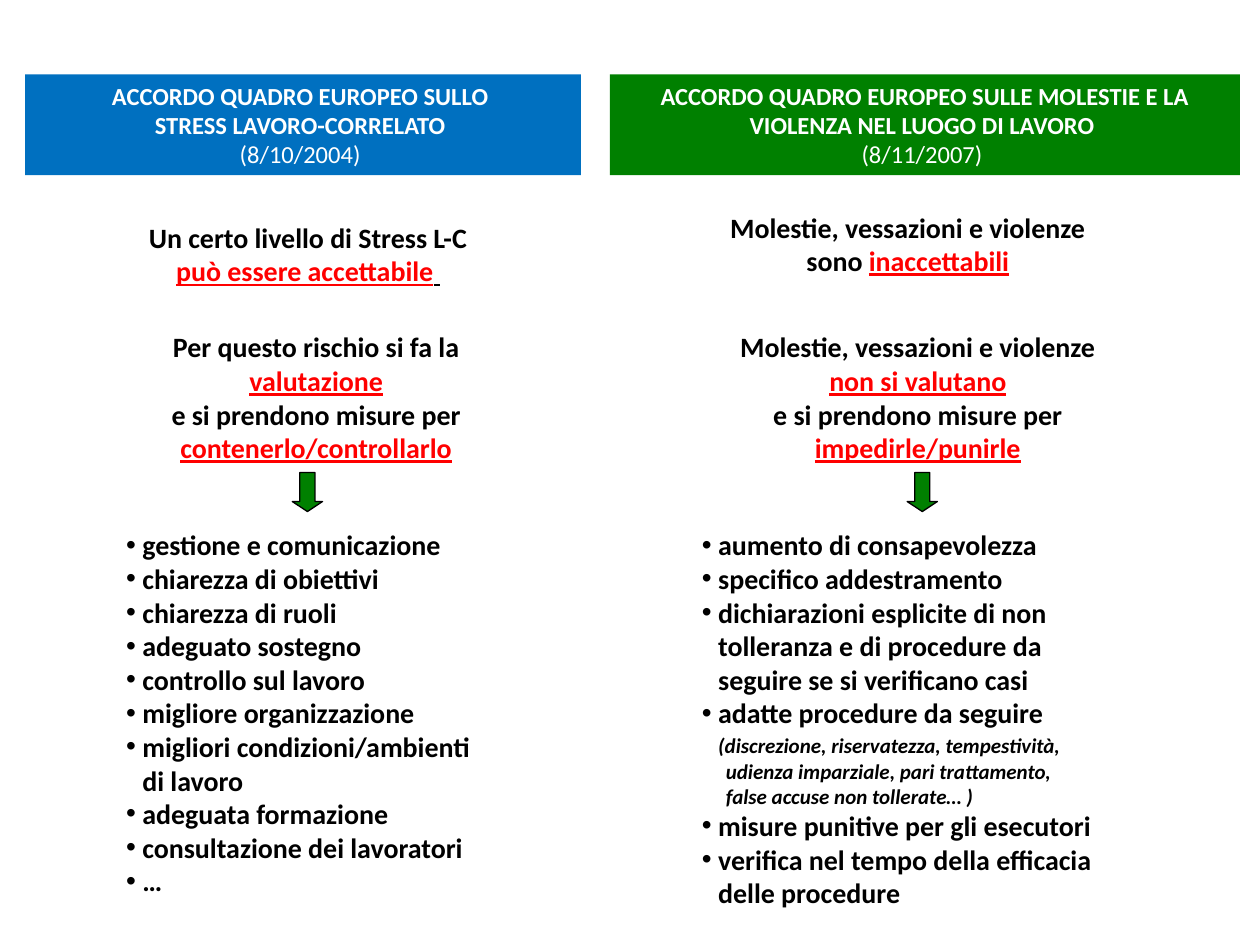
from pptx import Presentation
from pptx.dml.color import RGBColor as Rgb
from pptx.enum.shapes import MSO_SHAPE as Kind
from pptx.enum.text import MSO_ANCHOR as Anchor, MSO_AUTO_SIZE as Auto, PP_ALIGN as Align
from pptx.oxml.xmlchemy import OxmlElement as Node
from pptx.util import Inches, Pt

BLUE = Rgb(0x00, 0x70, 0xC0)
GREEN = Rgb(0x00, 0x80, 0x00)
RED = Rgb(0xFF, 0x00, 0x00)
BLACK = Rgb(0x00, 0x00, 0x00)
WHITE = Rgb(0xFF, 0xFF, 0xFF)

BASE = {"name": "Calibri", "size": Pt(16), "bold": True, "italic": False}
HEAD = {**BASE, "size": Pt(14)}
NOTE = {**BASE, "size": Pt(12), "italic": True}
FRAME = {"word_wrap": True, "auto_size": Auto.NONE, "vertical_anchor": Anchor.TOP}
PARA = {"space_before": Pt(0), "space_after": Pt(0), "line_spacing": 1.0}
INDENT = 0.13

SIDES = [
    {
        "fill": BLUE,
        "head": ((0.2, 0.59, 4.41, 0.8),
                 ["ACCORDO QUADRO EUROPEO SULLO ", "STRESS LAVORO-CORRELATO ", "(8/10/2004) "]),
        "claims": [
            ((0.83, 1.7, 3.23, 0.64),
             ["Un certo livello di Stress L-C", "|può essere accettabile| "]),
            ((1.06, 2.57, 2.9, 1.17),
             ["Per questo rischio si fa la", "|valutazione",
              "e si prendono misure per", "|contenerlo/controllarlo"]),
        ],
        "arrow": (2.32, 3.75, 0.24, 0.31),
        "list": ((0.9, 4.14, 3.29, 3.04), [
            "• gestione e comunicazione", "• chiarezza di obiettivi", "• chiarezza di ruoli",
            "• adeguato sostegno", "• controllo sul lavoro", "• migliore organizzazione",
            "• migliori condizioni/ambienti", "di lavoro", "• adeguata formazione",
            "• consultazione dei lavoratori", "• …"]),
    },
    {
        "fill": GREEN,
        "head": ((4.84, 0.59, 5, 0.8),
                 ["ACCORDO QUADRO EUROPEO SULLE MOLESTIE E LA VIOLENZA NEL LUOGO DI LAVORO ",
                  "(8/11/2007) "]),
        "claims": [
            ((5.47, 1.62, 3.47, 0.64),
             ["Molestie, vessazioni e violenze", "sono |inaccettabili"]),
            ((5.55, 2.57, 3.47, 1.17),
             ["Molestie, vessazioni e violenze", "|non si valutano",
              "e si prendono misure per", "|impedirle/punirle"]),
        ],
        "arrow": (7.2, 3.75, 0.24, 0.31),
        "list": ((5.47, 4.14, 3.77, 3.14), [
            "• aumento di consapevolezza", "• specifico addestramento",
            "• dichiarazioni esplicite di non", "tolleranza e di procedure da",
            "seguire se si verificano casi", "• adatte procedure da seguire",
            "~(discrezione, riservatezza, tempestività,",
            "~udienza imparziale, pari trattamento,", "~false accuse non tollerate… )",
            "• misure punitive per gli esecutori", "• verifica nel tempo della efficacia",
            "delle procedure"]),
    },
]


def style(item, values):
    """Set each attribute of an item from a dict."""
    for name, value in values.items():
        setattr(item, name, value)


def place(shape, box):
    """Move a shape to its box."""
    style(shape, dict(zip(("left", "top", "width", "height"), map(Inches, box))))


def lines(frame, texts, align):
    """Yield each text with a fresh paragraph for it."""
    style(frame, FRAME)
    for i, text in enumerate(texts):
        para = frame.add_paragraph() if i else frame.paragraphs[0]
        style(para, {**PARA, "alignment": align})
        yield text, para


def write(para, text, font, color):
    """Add a run in the given font and colour."""
    run = para.add_run()
    run.text = text
    style(run.font, font)
    run.font.color.rgb = color


def bullet(para, mark, left):
    """Set the indent of a paragraph and its bullet, if any."""
    props = para._p.get_or_add_pPr()
    props.set("marL", str(Inches(left)))
    props.set("indent", str(Inches(-left if mark else 0)))
    sign = Node("a:buChar" if mark else "a:buNone")
    if mark:
        sign.set("char", mark)
    props.append(sign)


def header(shape, box, texts, fill):
    """Fill a heading placeholder, with the date in plain weight."""
    place(shape, box)
    shape.fill.solid()
    shape.fill.fore_color.rgb = fill
    for text, para in lines(shape.text_frame, texts, Align.CENTER):
        bullet(para, "", 0)
        write(para, text, {**HEAD, "bold": text != texts[-1]}, WHITE)


def claim(slide, box, texts):
    """Add a centred statement whose key words are red and underlined."""
    shape = slide.shapes.add_textbox(*map(Inches, box))
    for text, para in lines(shape.text_frame, texts, Align.CENTER):
        for i, part in enumerate(text.split("|")):
            if part:
                write(para, part, {**BASE, "underline": i > 0}, RED if i == 1 else BLACK)


def arrow(slide, box):
    """Add a green down arrow."""
    shape = slide.shapes.add_shape(Kind.DOWN_ARROW, *map(Inches, box))
    shape.shadow.inherit = False
    shape.adjustments[1] = 0.33
    shape.fill.solid()
    shape.fill.fore_color.rgb = GREEN
    shape.line.color.rgb = BLACK
    shape.line.width = Pt(0.75)


def points(shape, box, texts):
    """Fill a list placeholder with points, follow-on lines and small notes."""
    place(shape, box)
    for text, para in lines(shape.text_frame, texts, Align.LEFT):
        note = text.startswith("~")
        opens = text.startswith("~(")
        if opens:
            para.space_before = Pt(2)
        mark = "•" if text.startswith("•") else ""
        bullet(para, mark, 0.19 if note and not opens else INDENT)
        write(para, text.lstrip("•~ "), NOTE if note else BASE, BLACK)


def main():
    """Build the slide and save it."""
    deck = Presentation()
    style(deck, {"slide_width": Inches(10), "slide_height": Inches(7.5)})
    slide = deck.slides.add_slide(deck.slide_layouts[4])
    title = slide.shapes.title.element
    title.getparent().remove(title)
    holders = {item.placeholder_format.idx: item for item in slide.placeholders}
    for i, side in enumerate(SIDES):
        header(holders[2 * i + 1], *side["head"], side["fill"])
        for box, texts in side["claims"]:
            claim(slide, box, texts)
        arrow(slide, side["arrow"])
        points(holders[2 * i + 2], *side["list"])
    deck.save("out.pptx")


if __name__ == "__main__":
    main()
